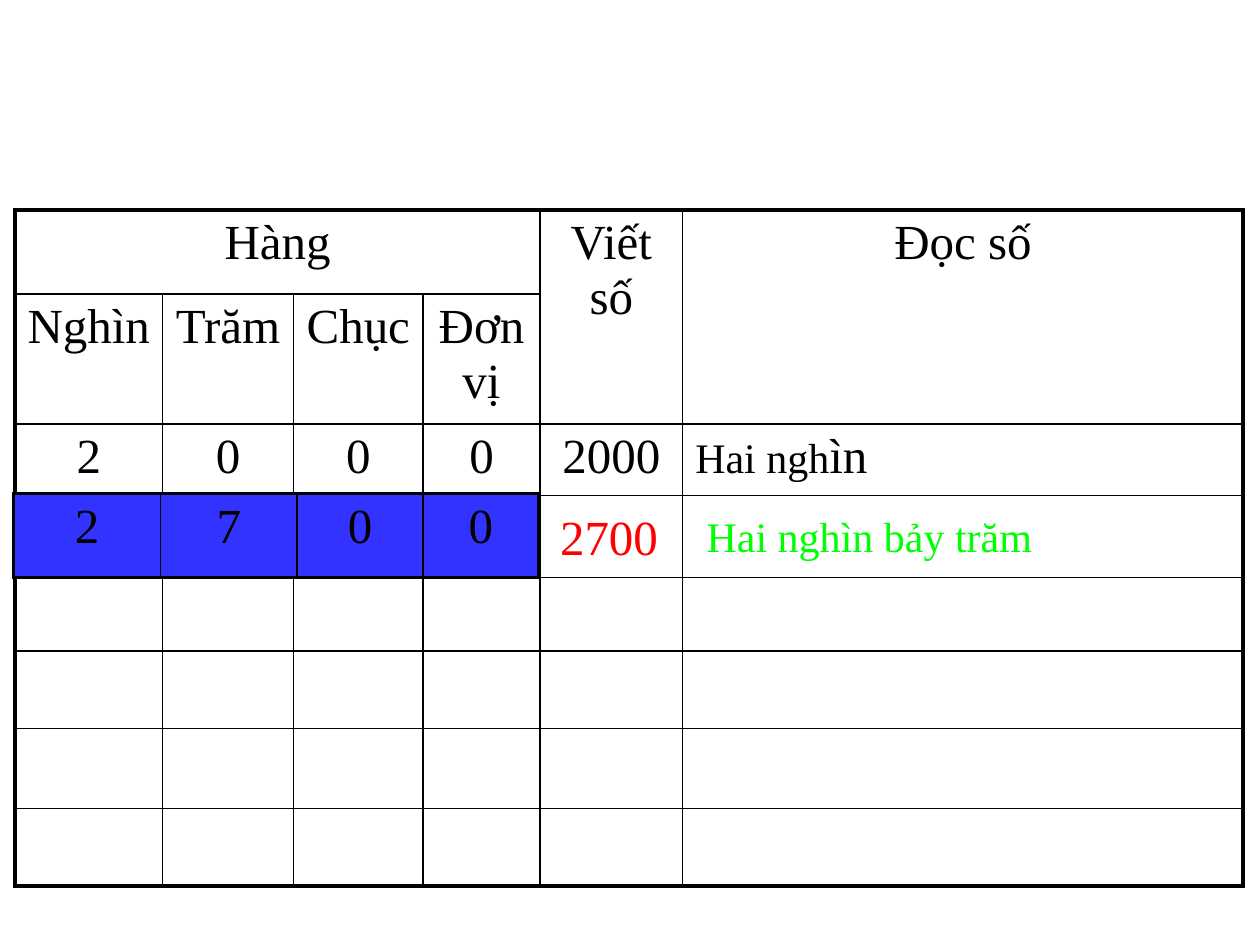
from dataclasses import dataclass

from lxml import etree
from pptx import Presentation
from pptx.dml.color import RGBColor
from pptx.enum.shapes import MSO_SHAPE
from pptx.enum.text import MSO_ANCHOR, PP_ALIGN
from pptx.oxml.ns import qn
from pptx.util import Pt

CENTER, LEFT = PP_ALIGN.CENTER, PP_ALIGN.LEFT
MIDDLE = MSO_ANCHOR.MIDDLE
RECTANGLE = MSO_SHAPE.RECTANGLE


@dataclass(frozen=True)
class Theme:
    font: str = "Times New Roman"
    black: str = "000000"
    white: str = "FFFFFF"
    blue: str = "3333FF"
    red: str = "FF0000"
    green: str = "00FF00"
    large: float = 28
    medium: float = 24
    outer_line: float = 2.25
    inner_line: float = 1


theme = Theme()


def write_text(text_frame, parts, color, alignment=CENTER):
    """Write (text, size) parts as runs of one paragraph."""
    paragraph = text_frame.paragraphs[0]
    paragraph.alignment = alignment
    for text, size in parts:
        run = paragraph.add_run()
        run.text = text
        run.font.name = theme.font
        run.font.size = Pt(size)
        run.font.color.rgb = RGBColor.from_string(color)


def add_grid(slide, left, top, widths, heights, merges=(), fill=None):
    """Add a table with a thick frame and thin inner lines."""
    table = slide.shapes.add_table(
        len(heights), len(widths), Pt(left), Pt(top), Pt(sum(widths)), Pt(sum(heights))
    ).table
    table.first_row = table.horz_banding = False
    for column, width in zip(table.columns, widths):
        column.width = Pt(width)
    for row, height in zip(table.rows, heights):
        row.height = Pt(height)
    for first, last in merges:
        table.cell(*first).merge(table.cell(*last))

    for r in range(len(heights)):
        for c in range(len(widths)):
            cell = table.cell(r, c)
            if cell.is_spanned:
                continue
            bottom = r + (cell.span_height if cell.is_merge_origin else 1)
            right = c + (cell.span_width if cell.is_merge_origin else 1)
            outer_edges = {
                "a:lnL": c == 0,
                "a:lnR": right == len(widths),
                "a:lnT": r == 0,
                "a:lnB": bottom == len(heights),
            }
            properties = cell._tc.get_or_add_tcPr()
            for tag, is_outer in outer_edges.items():
                width = theme.outer_line if is_outer else theme.inner_line
                line = etree.SubElement(properties, qn(tag), w=str(Pt(width)))
                solid = etree.SubElement(line, qn("a:solidFill"))
                etree.SubElement(solid, qn("a:srgbClr"), val=theme.black)
            if fill:
                cell.fill.solid()
                cell.fill.fore_color.rgb = RGBColor.from_string(fill)
            else:
                cell.fill.background()
    return table


presentation = Presentation()
presentation.slide_width, presentation.slide_height = Pt(720), Pt(540)
slide = presentation.slides.add_slide(presentation.slide_layouts[6])

# Place value table
place_table = add_grid(
    slide, 8.6, 120,
    widths=[84.3, 74.9, 74, 66.8, 81.6, 320.3],
    heights=[48, 74.3, 40.9, 46.9, 42, 44.3, 45.7, 44.3],
    merges=[((0, 0), (0, 3)), ((0, 4), (1, 4)), ((0, 5), (1, 5))],
)
place_rows = [
    ["Hàng", "", "", "", "Viết số", "Đọc số"],
    ["Nghìn", "Trăm", "Chục", "Đơn vị"],
    ["2", "0", "0", "0", "2000"],
]
for r, labels in enumerate(place_rows):
    for c, label in enumerate(labels):
        if label:
            write_text(place_table.cell(r, c).text_frame, [(label, theme.large)], theme.black)
reading_cell = place_table.cell(2, 5)
write_text(
    reading_cell.text_frame,
    [("Hai ngh", theme.medium), ("ìn", theme.large)],
    theme.black, LEFT,
)

# Highlighted digits
digit_table = add_grid(slide, 7.8, 282, [84, 78, 72, 66], [48], fill=theme.blue)
for c, digit in enumerate("2700"):
    write_text(digit_table.cell(0, c).text_frame, [(digit, theme.large)], theme.black)

# Answers for the highlighted row
answers = [
    ("2700", 312, 72, theme.large, theme.red),
    ("Hai nghìn bảy trăm", 428.4, 136.8, theme.medium, theme.green),
]
for text, left, width, size, color in answers:
    shape = slide.shapes.add_shape(RECTANGLE, Pt(left), Pt(294), Pt(width), Pt(24))
    shape.shadow.inherit = False
    shape.fill.solid()
    shape.fill.fore_color.rgb = RGBColor.from_string(theme.white)
    shape.line.color.rgb = RGBColor.from_string(theme.white)
    shape.line.width = Pt(0.75)
    shape.text_frame.word_wrap = False
    shape.text_frame.vertical_anchor = MIDDLE
    write_text(shape.text_frame, [(text, size)], color)

presentation.save("out.pptx")
